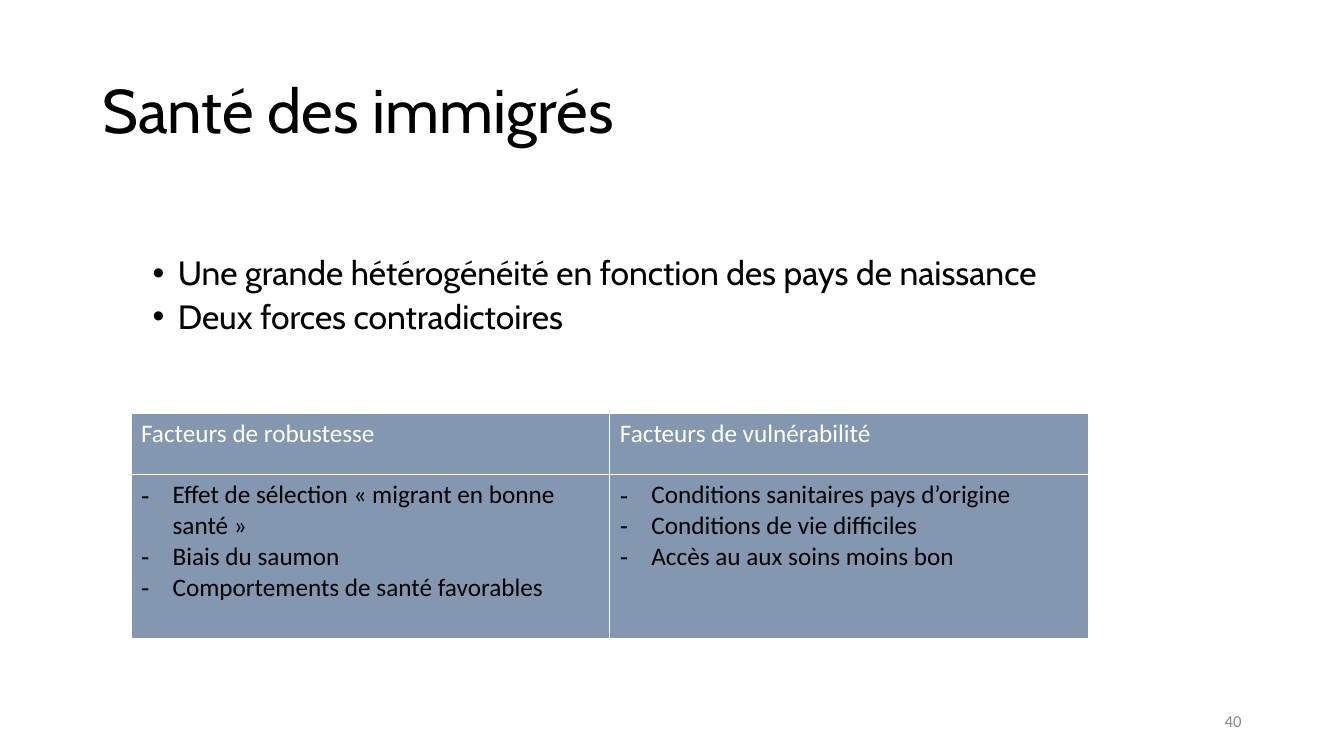
from dataclasses import dataclass

from lxml import etree
from pptx import Presentation
from pptx.dml.color import RGBColor
from pptx.enum.text import MSO_ANCHOR, PP_ALIGN
from pptx.oxml.ns import qn
from pptx.util import Pt

MIDDLE, TOP = MSO_ANCHOR.MIDDLE, MSO_ANCHOR.TOP
RIGHT = PP_ALIGN.RIGHT


@dataclass(frozen=True)
class Theme:
    head: str = "Cabin"
    body: str = "Calibri"
    black: str = "000000"
    white: str = "FFFFFF"
    gray: str = "8C8C8C"
    blue: str = "8497B0"
    title: int = 44
    point: int = 24
    cell: int = 18
    page: int = 12


THEME = Theme()

FACTORS = {
    "Facteurs de robustesse": [
        "Effet de sélection «\u00a0migrant en bonne santé\u00a0»",
        "Biais du saumon",
        "Comportements de santé favorables",
    ],
    "Facteurs de vulnérabilité": [
        "Conditions sanitaires pays d’origine",
        "Conditions de vie difficiles",
        "Accès au aux soins moins bon",
    ],
}


def style(font, name, size, color):
    for key, value in {"name": name, "size": Pt(size)}.items():
        setattr(font, key, value)
    font.color.rgb = RGBColor.from_string(color)


def mark(para, char, left, hang):
    """Give a paragraph a bullet and a hanging indent."""
    props = para._p.get_or_add_pPr()
    props.set("marL", str(Pt(left)))
    props.set("indent", str(Pt(-hang)))
    etree.SubElement(props, qn("a:buFont")).set("typeface", "Arial")
    etree.SubElement(props, qn("a:buChar")).set("char", char)


def write(frame, lines, font, bullet=None, **form):
    """Fill a frame with one paragraph per line; font is name, size, colour."""
    for i, line in enumerate(lines):
        para = frame.paragraphs[0] if i == 0 else frame.add_paragraph()
        para.text = line
        if bullet:
            mark(para, *bullet)
        for key, value in form.items():
            if key != "space_before" or i:
                setattr(para, key, value)
        style(para.font, *font)


def add_box(slide, box, anchor):
    frame = slide.shapes.add_textbox(*map(Pt, box)).text_frame
    for key, value in {"word_wrap": True, "vertical_anchor": anchor}.items():
        setattr(frame, key, value)
    return frame


def add_title(slide, box):
    font = THEME.head, THEME.title, THEME.black
    write(add_box(slide, box, MIDDLE), ["Santé des immigrés"], font, line_spacing=0.9)


def add_points(slide, box):
    lines = [
        "Une grande hétérogénéité en fonction des pays de naissance",
        "Deux forces contradictoires",
    ]
    font = THEME.head, THEME.point, THEME.black
    write(add_box(slide, box, TOP), lines, font, ("•", 54, 18),
          level=1, line_spacing=0.9, space_before=Pt(5))


def add_page(slide, box):
    font = THEME.body, THEME.page, THEME.gray
    write(add_box(slide, box, MIDDLE), ["40"], font, alignment=RIGHT)


def paint(cell):
    """Fill a cell and rule its four sides."""
    cell.fill.solid()
    cell.fill.fore_color.rgb = RGBColor.from_string(THEME.blue)
    props = cell._tc.get_or_add_tcPr()
    for i, side in enumerate("LRTB"):
        line = etree.Element(qn(f"a:ln{side}"), w=str(Pt(1)))
        fill = etree.SubElement(line, qn("a:solidFill"))
        etree.SubElement(fill, qn("a:srgbClr")).set("val", THEME.white)
        props.insert(i, line)


def add_factors(slide, box):
    left, top, width, height = box
    head = 44
    table = slide.shapes.add_table(2, len(FACTORS), *map(Pt, box)).table
    table.first_row = table.horz_banding = False
    for row, size in zip(table.rows, (head, height - head)):
        row.height = Pt(size)
    for col, (name, items) in enumerate(FACTORS.items()):
        table.columns[col].width = Pt(width / len(FACTORS))
        top_cell, low_cell = table.cell(0, col), table.cell(1, col)
        for cell in (top_cell, low_cell):
            paint(cell)
        write(top_cell.text_frame, [name], (THEME.body, THEME.cell, THEME.white))
        write(low_cell.text_frame, items, (THEME.body, THEME.cell, THEME.black),
              ("-", 22.5, 22.5))


def main():
    deck = Presentation()
    deck.slide_width, deck.slide_height = Pt(960), Pt(540)
    slide = deck.slides.add_slide(deck.slide_layouts[6])
    add_title(slide, (66, 28.8, 828, 104.4))
    add_points(slide, (66, 180, 828, 72))
    add_page(slide, (678, 500.5, 216, 28.8))
    add_factors(slide, (93.6, 295.2, 684, 161))
    deck.save("out.pptx")


if __name__ == "__main__":
    main()
